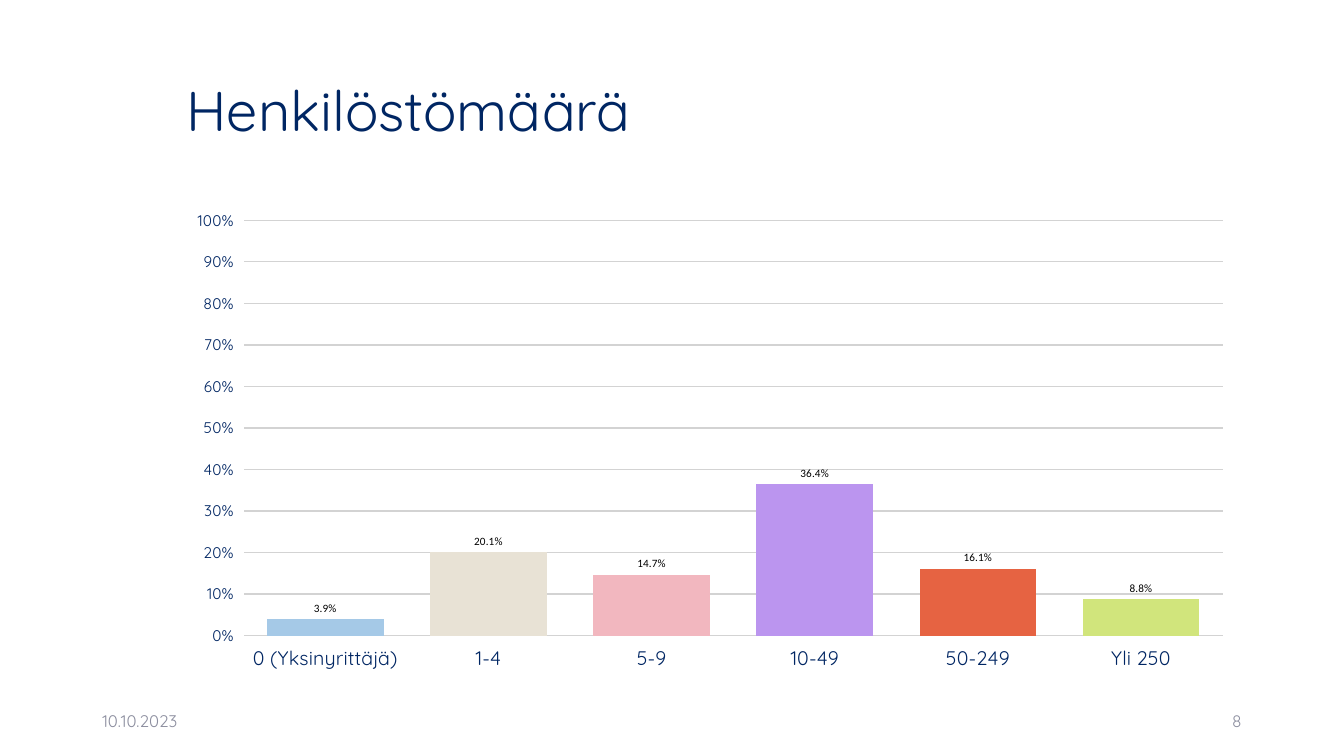
from lxml import etree
from pptx import Presentation
from pptx.chart.data import CategoryChartData
from pptx.dml.color import RGBColor
from pptx.enum.chart import XL_CHART_TYPE as ChartType, XL_LABEL_POSITION as LabelPos
from pptx.enum.text import MSO_ANCHOR as Anchor, PP_ALIGN as Align
from pptx.oxml.ns import qn
from pptx.util import Cm, Pt

NAVY = RGBColor(0x00, 0x26, 0x63)
GREY = RGBColor(0x8C, 0x8E, 0x9F)
GRID = RGBColor(0xD3, 0xD3, 0xD3)
BLACK = RGBColor(0x00, 0x00, 0x00)

HEADCOUNT = [
    ("0 (Yksinyrittäjä)", 0.039, RGBColor(0xA5, 0xC9, 0xE7)),
    ("1-4", 0.201, RGBColor(0xE8, 0xE2, 0xD5)),
    ("5-9", 0.147, RGBColor(0xF2, 0xB7, 0xBF)),
    ("10-49", 0.364, RGBColor(0xBB, 0x95, 0xEF)),
    ("50-249", 0.161, RGBColor(0xE6, 0x63, 0x42)),
    ("Yli 250", 0.088, RGBColor(0xD1, 0xE5, 0x7C)),
]
PLOT_LAYOUT = {"layoutTarget": "inner", "xMode": "edge", "yMode": "edge",
               "x": 0.063, "y": 0.039, "w": 0.917, "h": 0.866}


def set_attrs(obj, values):
    for name, value in values.items():
        setattr(obj, name, value)


def format_font(font, size, color, name="Quicksand"):
    set_attrs(font, {"size": Pt(size), "name": name, "bold": False})
    font.color.rgb = color


def write(sp, text, size, color, align=Align.LEFT, line_spacing=1.0):
    tf = sp.text_frame
    set_attrs(tf, {"word_wrap": True, "vertical_anchor": Anchor.MIDDLE})
    p = tf.paragraphs[0]
    set_attrs(p, {"alignment": align, "line_spacing": line_spacing})
    r = p.add_run()
    r.text = text
    format_font(r.font, size, color)


def add_title(s, text):
    sp = s.shapes.title
    set_attrs(sp, {"left": Cm(4.45), "top": Cm(1.02),
                   "width": Cm(26.9), "height": Cm(3.68)})
    write(sp, text, 40, NAVY, line_spacing=0.9)


def add_footer(s, left, text, align):
    sp = s.shapes.add_textbox(left, Cm(17.65), Cm(7.62), Cm(1.02))
    write(sp, text, 12, GREY, align)


def fix_plot_area(chart):
    """Place the inner plot area at fixed fractions of the chart."""
    plot_area = chart.plots[0]._element.getparent()
    for old in plot_area.findall(qn("c:layout")):
        plot_area.remove(old)
    layout = etree.Element(qn("c:layout"))
    manual = etree.SubElement(layout, qn("c:manualLayout"))
    for tag, value in PLOT_LAYOUT.items():
        etree.SubElement(manual, qn(f"c:{tag}")).set("val", str(value))
    plot_area.insert(0, layout)


def format_axes(chart):
    for axis, size in ((chart.category_axis, 14), (chart.value_axis, 11)):
        format_font(axis.tick_labels.font, size, NAVY)
        axis.format.line.fill.background()
    axis = chart.value_axis
    set_attrs(axis, {"minimum_scale": 0, "maximum_scale": 1, "major_unit": 0.1,
                     "has_major_gridlines": True})
    set_attrs(axis.tick_labels, {"number_format": "0%",
                                 "number_format_is_linked": False})
    line = axis.major_gridlines.format.line
    line.width = Pt(1)
    line.color.rgb = GRID


def format_columns(plot):
    set_attrs(plot, {"gap_width": 40, "overlap": -2,
                     "vary_by_categories": False, "has_data_labels": True})
    labels = plot.data_labels
    set_attrs(labels, {"show_value": True, "number_format": "0.0%",
                       "number_format_is_linked": False,
                       "position": LabelPos.OUTSIDE_END})
    format_font(labels.font, 8, BLACK, "Calibri")
    for i, (_, _, color) in enumerate(HEADCOUNT):
        fill = plot.series[0].points[i].format.fill
        fill.solid()
        fill.fore_color.rgb = color


def add_headcount_chart(s):
    data = CategoryChartData(number_format="0.0%")
    data.categories = [name for name, _, _ in HEADCOUNT]
    data.add_series("Series 1", [share for _, share, _ in HEADCOUNT])
    chart = s.shapes.add_chart(ChartType.COLUMN_CLUSTERED, Cm(4.45), Cm(5.08),
                               Cm(26.9), Cm(12.09), data).chart
    set_attrs(chart, {"has_legend": False, "has_title": False})
    format_font(chart.font, 11, BLACK, "Calibri")
    format_axes(chart)
    format_columns(chart.plots[0])
    fix_plot_area(chart)


def main():
    prs = Presentation()
    set_attrs(prs, {"slide_width": Cm(33.87), "slide_height": Cm(19.05)})
    s = prs.slides.add_slide(prs.slide_layouts.get_by_name("Title Only"))
    add_title(s, "Henkilöstömäärä")
    add_footer(s, Cm(2.33), "10.10.2023", Align.LEFT)
    add_footer(s, Cm(23.92), "8", Align.RIGHT)
    add_headcount_chart(s)
    prs.save("out.pptx")


if __name__ == "__main__":
    main()
